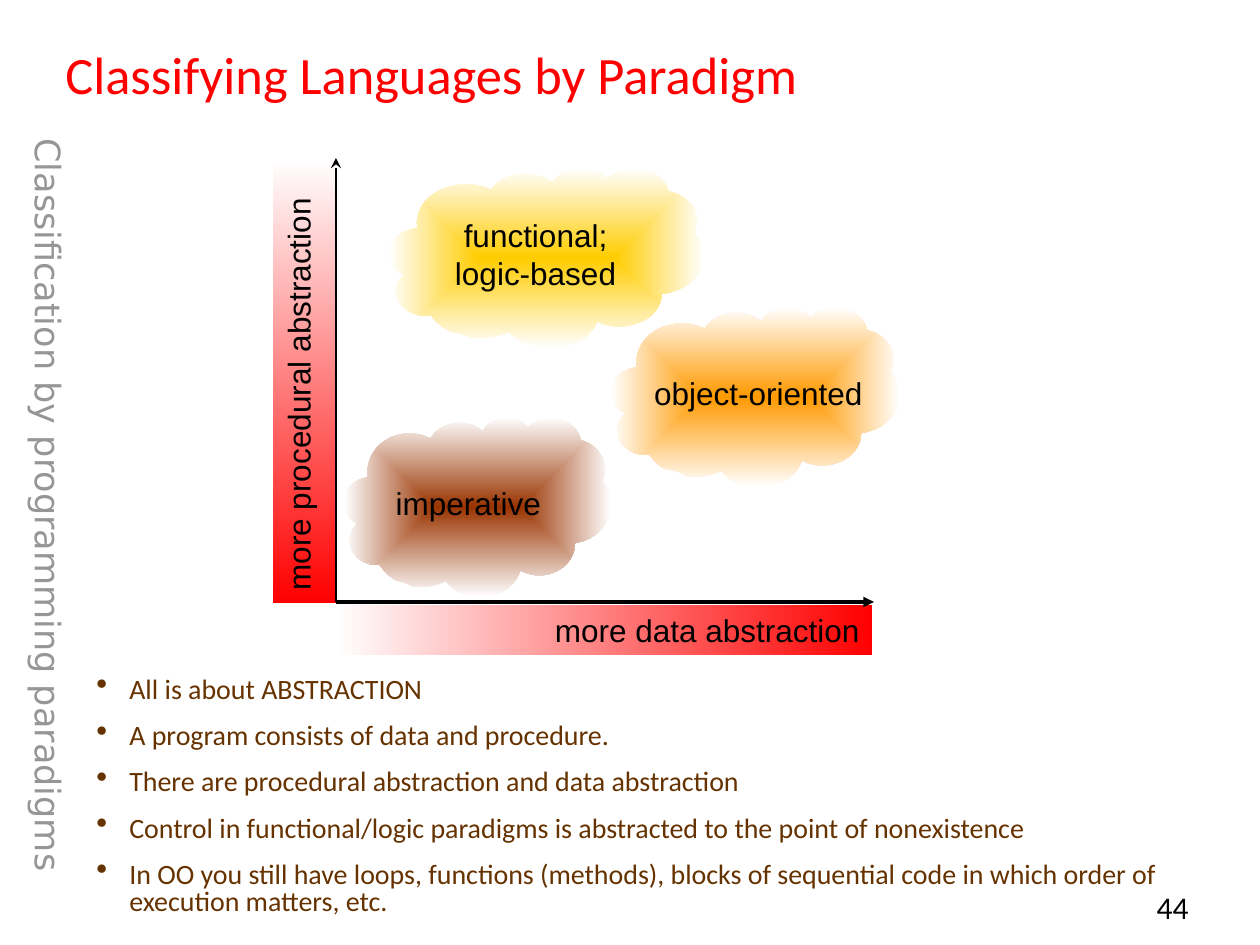
from dataclasses import dataclass

from lxml.etree import SubElement
from pptx import Presentation
from pptx.dml.color import RGBColor
from pptx.enum.shapes import MSO_CONNECTOR, MSO_SHAPE
from pptx.enum.text import MSO_ANCHOR, PP_ALIGN
from pptx.oxml.ns import qn
from pptx.util import Emu, Pt

SCALE = 914400 / 126
Box = tuple[int, int, int, int]


@dataclass
class Cloud:
    text: str
    hue: str
    box: Box
    cover: Box
    inset: int = 13


@dataclass
class Bar:
    text: str
    box: Box
    angle: int
    align: PP_ALIGN
    turn: str = "horz"


@dataclass
class Axis:
    start: tuple[int, int]
    end: tuple[int, int]
    width: float
    tip: str
    kind: str


@dataclass
class Label:
    text: str
    box: Box
    size: int
    font: str
    hue: str
    align: PP_ALIGN = PP_ALIGN.LEFT
    anchor: MSO_ANCHOR = MSO_ANCHOR.TOP
    turn: int = 0


CLOUDS = [
    Cloud("object-oriented", "FF9900", (611, 307, 289, 180), (615, 465, 82, 96), 39),
    Cloud("functional;\nlogic-based", "FFCC00", (389, 168, 315, 180), (401, 328, 82, 96)),
    Cloud("imperative", "993300", (344, 417, 267, 180), (350, 581, 82, 81)),
]
BARS = [
    Bar("more procedural abstraction", (273, 158, 63, 445), 270, PP_ALIGN.LEFT, "vert270"),
    Bar("more data abstraction", (335, 605, 537, 50), 0, PP_ALIGN.RIGHT),
]
AXES = [
    Axis((336, 158), (336, 602), 1.5, "headEnd", "stealth"),
    Axis((336, 602), (874, 602), 2, "tailEnd", "triangle"),
]
LABELS = [
    Label("44", (1117, 882, 84, 63), 18, "Calibri", "000000", PP_ALIGN.RIGHT),
    Label("Classifying Languages by Paradigm", (53, 42, 1144, 63), 30, "Calibri",
          "FF0000", anchor=MSO_ANCHOR.MIDDLE),
    Label("Classification by programming paradigms", (-341, 489, 780, 54), 20,
          "DejaVu Sans", "969696", turn=90),
]
POINTS = Label("\n".join([
    "All is about ABSTRACTION",
    "A program consists of data and procedure.",
    "There are procedural abstraction and data abstraction",
    "Control in functional/logic paradigms is abstracted to the point of nonexistence",
    "In OO you still have loops, functions (methods), blocks of sequential code "
    "in which order of execution matters, etc.",
]), (84, 672, 1113, 273), 16, "Calibri", "663300")


def px(num: int) -> Emu:
    return Emu(round(num * SCALE))


def rgb(hue: str) -> RGBColor:
    return RGBColor.from_string(hue)


def assign(item, values: dict) -> None:
    for name, value in values.items():
        setattr(item, name, value)


def write(shape, text: str, size: int, font: str, hue: str, align, **frame) -> None:
    body = shape.text_frame
    body.text = text
    assign(body, {"word_wrap": True, "vertical_anchor": MSO_ANCHOR.TOP} | frame)
    for para in body.paragraphs:
        para.alignment = align
        assign(para.runs[0].font, {"size": Pt(size), "name": font})
        para.runs[0].font.color.rgb = rgb(hue)


def add_plain(shapes, kind, box: Box):
    """Add a shape without line or shadow."""
    shape = shapes.add_shape(kind, *map(px, box))
    shape.shadow.inherit = False
    shape.line.fill.background()
    return shape


def blend(shape, first: str, last: str, angle: int = 0) -> None:
    shape.fill.gradient()
    shape.fill.gradient_angle = angle
    for stop, hue, place in zip(shape.fill.gradient_stops, (first, last), (0, 1)):
        stop.color.rgb = rgb(hue)
        stop.position = place


def centre(shape) -> None:
    """Make the gradient spread from the middle."""
    grad = shape.element.spPr.find(qn("a:gradFill"))
    grad.remove(grad.find(qn("a:lin")))
    route = SubElement(grad, qn("a:path"), {"path": "rect"})
    SubElement(route, qn("a:fillToRect"), dict.fromkeys("ltrb", "50000"))


def add_cloud(slide, cloud: Cloud) -> None:
    group = slide.shapes.add_group_shape()
    puff = add_plain(group.shapes, MSO_SHAPE.CLOUD_CALLOUT, cloud.box)
    puff.adjustments[0], puff.adjustments[1] = -0.44, 0.7
    blend(puff, cloud.hue, "FFFFFF")
    centre(puff)
    write(puff, cloud.text, 18, "Arial", "000000", PP_ALIGN.CENTER, word_wrap=False,
          vertical_anchor=MSO_ANCHOR.MIDDLE, margin_left=px(cloud.inset))
    cover = add_plain(group.shapes, MSO_SHAPE.OVAL, cloud.cover)
    cover.rotation = 55.4
    cover.fill.solid()
    cover.fill.fore_color.rgb = rgb("FFFFFF")


def add_bar(slide, bar: Bar) -> None:
    shape = add_plain(slide.shapes, MSO_SHAPE.RECTANGLE, bar.box)
    blend(shape, "FFFFFF", "FF0000", bar.angle)
    write(shape, bar.text, 18, "Arial", "000000", bar.align)
    shape.element.txBody.bodyPr.set("vert", bar.turn)


def add_axis(slide, axis: Axis) -> None:
    line = slide.shapes.add_connector(
        MSO_CONNECTOR.STRAIGHT, *map(px, axis.start + axis.end))
    line.line.color.rgb = rgb("000000")
    line.line.width = Pt(axis.width)
    SubElement(line.line._get_or_add_ln(), qn(f"a:{axis.tip}"), {"type": axis.kind})
    SubElement(line.element.spPr, qn("a:effectLst"))


def add_label(slide, label: Label):
    shape = slide.shapes.add_textbox(*map(px, label.box))
    shape.rotation = label.turn
    write(shape, label.text, label.size, label.font, label.hue, label.align,
          vertical_anchor=label.anchor)
    return shape


def add_points(slide, label: Label) -> None:
    for para in add_label(slide, label).text_frame.paragraphs:
        assign(para, {"line_spacing": 0.8, "space_after": Pt(11)})
        props = para._p.get_or_add_pPr()
        props.set("marL", str(px(33)))
        props.set("indent", str(px(-33)))
        SubElement(props, qn("a:buSzPct"), {"val": "115000"})
        SubElement(props, qn("a:buChar"), {"char": "•"})


def main() -> None:
    deck = Presentation()
    assign(deck, {"slide_width": px(1260), "slide_height": px(945)})
    slide = deck.slides.add_slide(deck.slide_layouts[6])
    for label in LABELS:
        add_label(slide, label)
    add_points(slide, POINTS)
    for cloud in CLOUDS:
        add_cloud(slide, cloud)
    for bar in BARS:
        add_bar(slide, bar)
    for axis in AXES:
        add_axis(slide, axis)
    deck.save("out.pptx")


if __name__ == "__main__":
    main()
